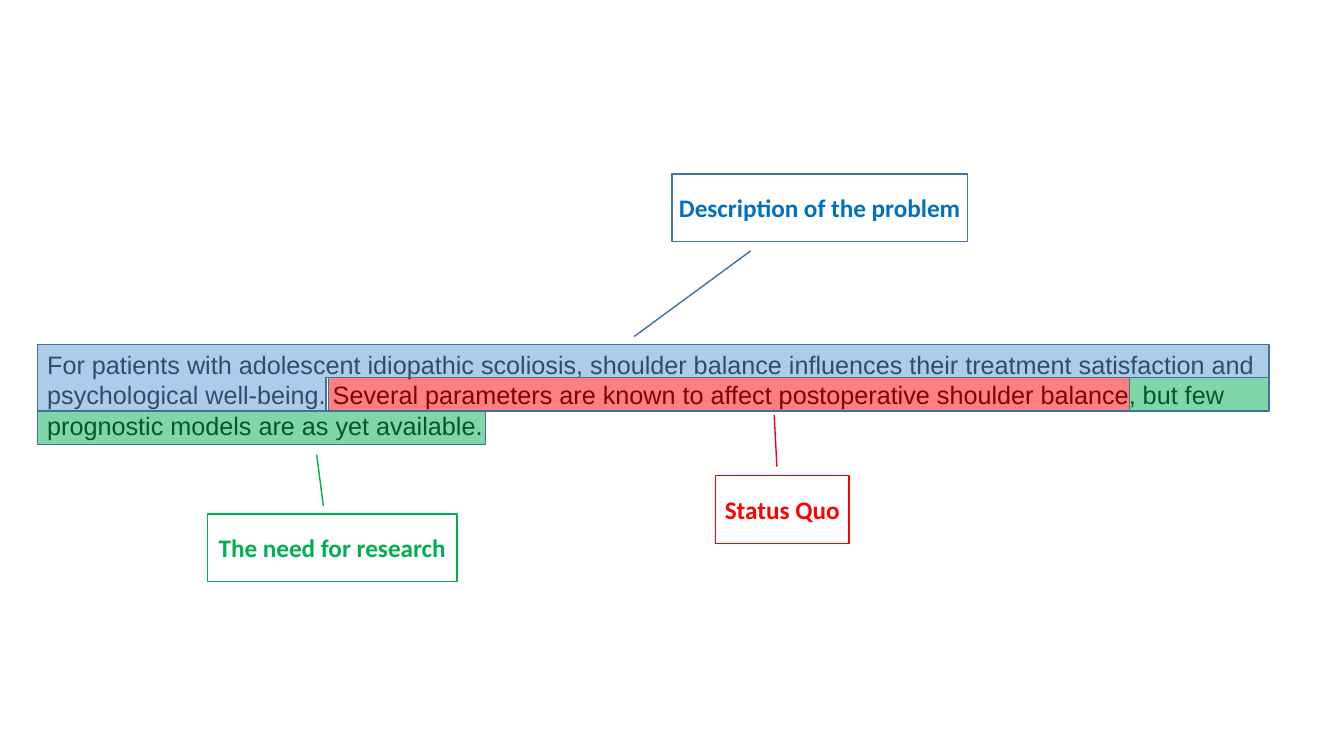
from lxml.etree import SubElement
from pptx import Presentation
from pptx.dml.color import RGBColor
from pptx.enum.shapes import MSO_CONNECTOR as Link, MSO_SHAPE as Preset
from pptx.enum.text import MSO_ANCHOR as Anchor, PP_ALIGN as Align
from pptx.oxml.ns import qn
from pptx.util import Cm, Pt

BLUE, RED, GREEN, EDGE = "5B9BD5", "FF0000", "00B050", "42719B"
LEFT, TOP, ROW, WIDTH = 0.94, 8.68, 0.84, 31.04
RIGHT = LEFT + WIDTH
BLUE_END, RED_START, RED_END, GREEN_END = 8.22, 8.28, 28.47, 12.24
ABSTRACT = (
    "For patients with adolescent idiopathic scoliosis, shoulder balance "
    "influences their treatment satisfaction and psychological well-being. "
    "Several parameters are known to affect postoperative shoulder balance, "
    "but few prognostic models are as yet available."
)


def color(hex_code):
    return RGBColor.from_string(hex_code)


def write(frame, text, font="Arial", ink="000000", bold=False,
          align=Align.LEFT, anchor=Anchor.TOP, wrap=True):
    frame.word_wrap = wrap
    frame.vertical_anchor = anchor
    paragraph = frame.paragraphs[0]
    paragraph.alignment = align
    run = paragraph.add_run()
    run.text = text
    run.font.name = font
    run.font.size = Pt(18)
    run.font.bold = bold
    run.font.color.rgb = color(ink)


def outline(shape, edge):
    shape.shadow.inherit = False
    shape.line.color.rgb = color(edge)
    shape.line.width = Pt(1)


def rectangle(slide, box):
    return slide.shapes.add_shape(Preset.RECTANGLE, *map(Cm, box))


def polygon(slide, corners):
    first, *others = [(Cm(x), Cm(y)) for x, y in corners]
    builder = slide.shapes.build_freeform(*first)
    builder.add_line_segments(others, close=True)
    return builder.convert_to_shape()


def highlight(marker, tint):
    outline(marker, EDGE)
    marker.fill.solid()
    marker.fill.fore_color.rgb = color(tint)
    tint_xml = marker._element.spPr.find(qn("a:solidFill"))[0]
    SubElement(tint_xml, qn("a:alpha"), val="50000")


def callout(slide, label, box, pointer, ink, edge):
    frame = rectangle(slide, box)
    outline(frame, edge)
    frame.fill.background()
    write(frame.text_frame, label, font="Calibri", ink=ink, bold=True,
          align=Align.CENTER, anchor=Anchor.MIDDLE, wrap=False)
    leader = slide.shapes.add_connector(Link.STRAIGHT, *map(Cm, pointer))
    leader.line.color.rgb = color(edge)
    leader.line.width = Pt(1)
    SubElement(leader._element.spPr, qn("a:effectLst"))


def main():
    deck = Presentation()
    deck.slide_width, deck.slide_height = Cm(33.87), Cm(19.05)
    slide = deck.slides.add_slide(deck.slide_layouts[6])

    abstract = slide.shapes.add_textbox(Cm(LEFT), Cm(TOP), Cm(31.98), Cm(2.54))
    write(abstract.text_frame, ABSTRACT)

    second_row, third_row = TOP + ROW, TOP + 2 * ROW
    problem = polygon(slide, (
        (LEFT, TOP), (RIGHT, TOP), (RIGHT, second_row),
        (BLUE_END, second_row), (BLUE_END, third_row), (LEFT, third_row),
    ))
    highlight(problem, BLUE)

    for start, end, top, tint in (
        (RED_START, RED_END, second_row, RED),
        (RED_END, RIGHT, second_row, GREEN),
        (LEFT, GREEN_END, third_row, GREEN),
    ):
        highlight(rectangle(slide, (start, top, end - start, ROW)), tint)

    callout(slide, "Description of the problem", (16.94, 4.39, 7.44, 1.7),
            (18.92, 6.32, 15.98, 8.48), "0070C0", EDGE)
    callout(slide, "Status Quo", (18.03, 11.99, 3.37, 1.7),
            (19.58, 11.76, 19.51, 10.46), RED, RED)
    callout(slide, "The need for research", (5.23, 12.95, 6.29, 1.7),
            (8.15, 12.75, 7.98, 11.46), GREEN, GREEN)

    deck.save("out.pptx")


if __name__ == "__main__":
    main()
